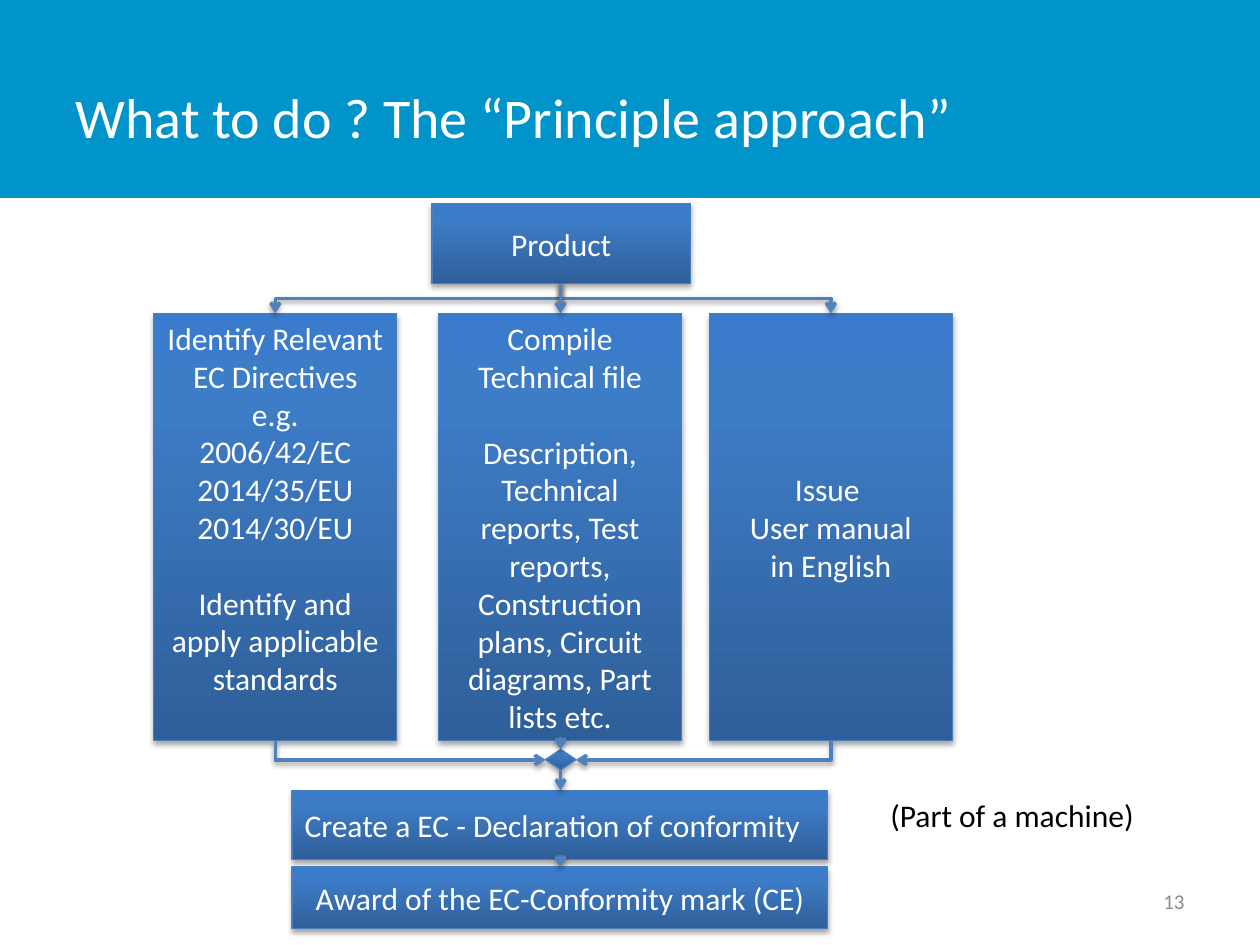
import copy
import dataclasses

import lxml.etree
import pptx
import pptx.dml.color
import pptx.enum.shapes
import pptx.enum.text
import pptx.oxml.ns
import pptx.util

Cm = pptx.util.Cm
Pt = pptx.util.Pt
qn = pptx.oxml.ns.qn
RGB = pptx.dml.color.RGBColor.from_string
Align = pptx.enum.text.PP_ALIGN
Anchor = pptx.enum.text.MSO_ANCHOR
Preset = pptx.enum.shapes.MSO_SHAPE
ConnectorType = pptx.enum.shapes.MSO_CONNECTOR


@dataclasses.dataclass(frozen=True)
class Theme:
    """Colours, font and type sizes of the slide."""

    font: str = "Calibri"
    title_size: int = 32
    body_size: int = 18
    number_size: int = 12
    band: str = "0094CA"
    light: str = "FFFFFF"
    dark: str = "000000"
    muted: str = "8C8C8C"
    outline: str = "4B7EBC"
    arrow: str = "4F81BD"
    gradient: tuple = ((0, "2F5F99"), (0.8, "3D7CC7"), (1, "3A7CCB"))


class FlowSlide:
    """Draws flow chart elements on one slide in one theme."""

    def __init__(self, slide, theme):
        self.slide = slide
        self.theme = theme

    def format_text(self, text_frame, size, color, align, anchor):
        text_frame.word_wrap = True
        text_frame.vertical_anchor = anchor
        for paragraph in text_frame.paragraphs:
            paragraph.alignment = align
            for run in paragraph.runs:
                run.font.name = self.theme.font
                run.font.size = Pt(size)
                run.font.color.rgb = RGB(color)

    def add_shadow(self, properties, opacity, distance):
        effects = properties.find(qn("a:effectLst"))
        if effects is None:
            effects = lxml.etree.SubElement(properties, qn("a:effectLst"))
        shadow = lxml.etree.SubElement(
            effects, qn("a:outerShdw"), blurRad=str(Pt(3.1)), dist=str(Pt(distance)),
            dir="5400000", rotWithShape="0")
        color = lxml.etree.SubElement(shadow, qn("a:srgbClr"), val=self.theme.dark)
        lxml.etree.SubElement(color, qn("a:alpha"), val=str(opacity * 1000))

    def add_band(self, height):
        band = self.slide.shapes.add_shape(Preset.RECTANGLE, 0, 0, Cm(25.4), Cm(height))
        band.shadow.inherit = False
        band.fill.solid()
        band.fill.fore_color.rgb = RGB(self.theme.band)
        band.line.fill.background()
        self.slide.shapes.title._element.addprevious(band._element)

    def add_title(self, text, left, top, width, height):
        title = self.slide.shapes.title
        title.left, title.top, title.width, title.height = map(Cm, (left, top, width, height))
        title.text_frame.text = text
        self.format_text(title.text_frame, self.theme.title_size, self.theme.light,
                         Align.LEFT, Anchor.MIDDLE)

    def add_label(self, text, left, top, width, height, size, color, align, anchor):
        label = self.slide.shapes.add_textbox(Cm(left), Cm(top), Cm(width), Cm(height))
        label.text_frame.text = text
        self.format_text(label.text_frame, size, color, align, anchor)

    def add_step(self, text, left, top, width, height, preset=Preset.RECTANGLE, align=Align.CENTER):
        step = self.slide.shapes.add_shape(preset, Cm(left), Cm(top), Cm(width), Cm(height))
        step.shadow.inherit = False
        step.fill.gradient()
        step.fill.gradient_angle = 90
        stop_list = step._element.spPr.find(qn("a:gradFill")).find(qn("a:gsLst"))
        stop_list.append(copy.deepcopy(stop_list[0]))
        for stop, (position, color) in zip(step.fill.gradient_stops, self.theme.gradient):
            stop.position = position
            stop.color.rgb = RGB(color)
        step.line.color.rgb = RGB(self.theme.outline)
        step.line.width = Pt(0.75)
        self.add_shadow(step._element.spPr, 35, 1.8)
        if text:
            step.text_frame.text = text
            self.format_text(step.text_frame, self.theme.body_size, self.theme.light,
                             align, Anchor.MIDDLE)
        return step

    def add_arrow(self, start, end, preset=None):
        (start_x, start_y), (end_x, end_y) = start, end
        if preset:
            middle_x, middle_y = (start_x + end_x) / 2, (start_y + end_y) / 2
            half_width, half_height = abs(end_y - start_y) / 2, abs(end_x - start_x) / 2
            corners = (middle_x - half_width, middle_y - half_height,
                       middle_x + half_width, middle_y + half_height)
        else:
            corners = (*start, *end)
        kind = ConnectorType.ELBOW if preset else ConnectorType.STRAIGHT
        arrow = self.slide.shapes.add_connector(kind, *map(Cm, corners))
        properties = arrow._element.spPr
        if preset:
            properties.find(qn("a:prstGeom")).set("prst", preset)
            transform = properties.find(qn("a:xfrm"))
            goes_right = end_x > start_x
            transform.set("rot", str((270 if goes_right else 90) * 60000))
            if goes_right:
                transform.set("flipH", "1")
        arrow.line.color.rgb = RGB(self.theme.arrow)
        arrow.line.width = Pt(2)
        lxml.etree.SubElement(properties.find(qn("a:ln")), qn("a:tailEnd"), type="arrow")
        self.add_shadow(properties, 38, 1.6)


def main():
    theme = Theme()
    presentation = pptx.Presentation()
    presentation.slide_width, presentation.slide_height = Cm(25.4), Cm(19.05)
    slide = presentation.slides.add_slide(presentation.slide_layouts[5])
    flow = FlowSlide(slide, theme)

    flow.add_band(3.99)
    flow.add_title("What to do ? The “Principle approach”", 1.27, 0.76, 19.84, 3.18)
    flow.add_label("13", 18.21, 17.65, 5.92, 1.02, theme.number_size, theme.muted,
                   Align.RIGHT, Anchor.MIDDLE)

    column_top, column_width, column_height = 6.32, 4.9, 8.61
    column_bottom = column_top + column_height
    columns = (
        (3.1, "Identify Relevant EC Directives e.g.\n2006/42/EC\n2014/35/EU\n2014/30/EU\n"
              "Identify and apply applicable standards"),
        (8.84, "Compile Technical file\nDescription, Technical reports, Test reports, "
               "Construction plans, Circuit diagrams, Part lists etc."),
        (14.3, "Issue \nUser manual\nin English"),
    )
    directives, technical_file, manual = [
        flow.add_step(text, left, column_top, column_width, column_height)
        for left, text in columns]
    for column in (directives, technical_file):
        column.text_frame.paragraphs[-1].space_before = Pt(21.6)
    directives.text_frame.margin_bottom = Cm(0.89)

    flow.add_step("Create a EC - Declaration of conformity", 5.89, 15.93, 10.8, 1.4,
                  align=Align.LEFT)
    flow.add_step("Award of the EC-Conformity mark (CE)", 5.89, 17.48, 10.8, 1.24)
    flow.add_step("Product", 8.71, 4.11, 5.21, 1.6)
    flow.add_step("", 11, 15.11, 0.61, 0.41, preset=Preset.FLOWCHART_DECISION)

    center, product_bottom, merge_y = 11.3, 5.71, 15.32
    left_center, right_center = (left + column_width / 2 for left in (3.1, 14.3))
    for column_center, merge_x in ((left_center, 11), (right_center, 11.61)):
        flow.add_arrow((center, product_bottom), (column_center, column_top), "bentConnector3")
        flow.add_arrow((column_center, column_bottom), (merge_x, merge_y), "bentConnector2")
    for top, bottom in ((product_bottom, column_top), (column_bottom, 15.11),
                        (15.52, 15.93), (17.33, 17.48)):
        flow.add_arrow((center, top), (center, bottom))

    flow.add_label("(Part of a machine)", 17.7, 15.93, 5.99, 1.02, theme.body_size, theme.dark,
                   Align.LEFT, Anchor.TOP)
    presentation.save("out.pptx")


if __name__ == "__main__":
    main()
